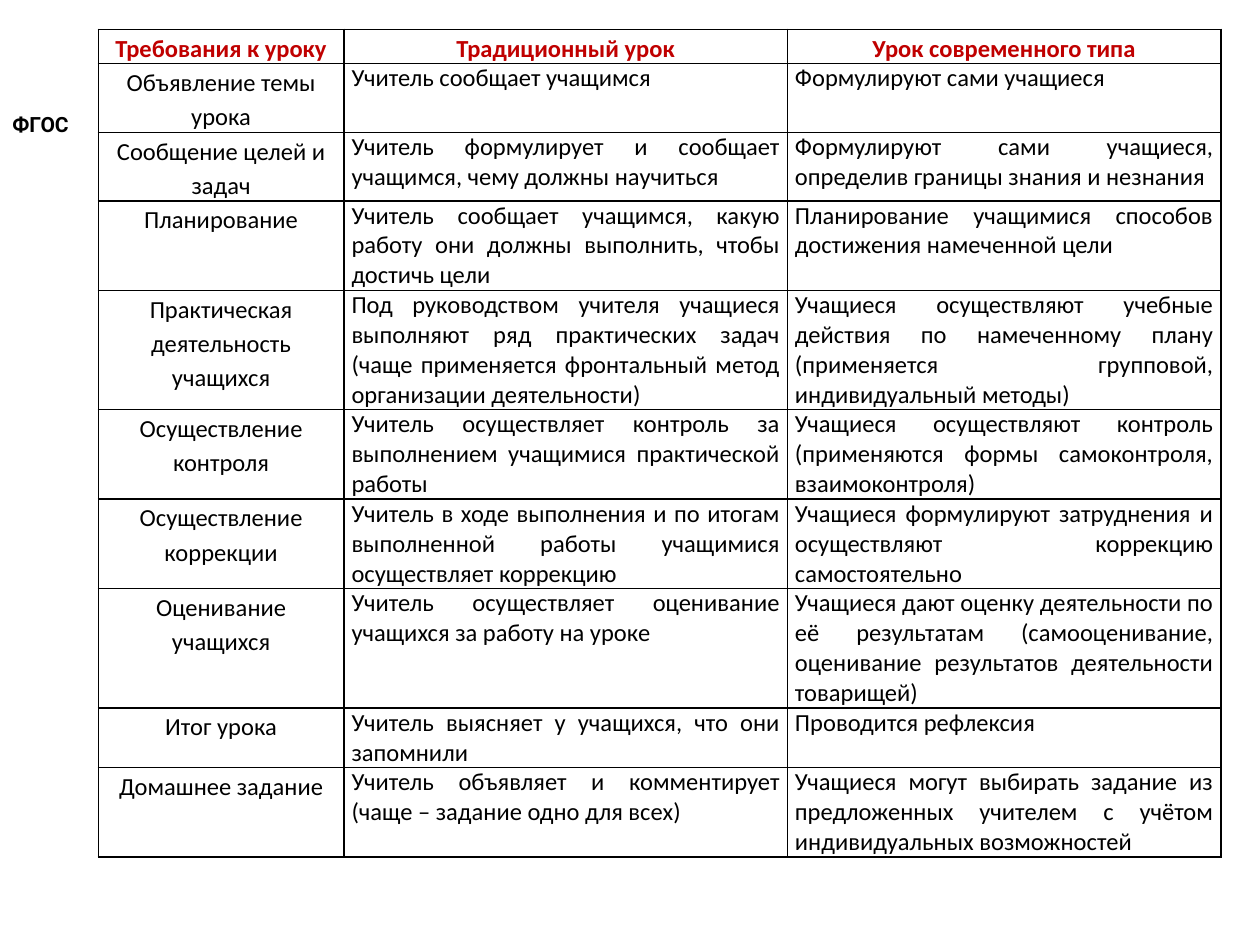
from dataclasses import dataclass

from lxml import etree
from pptx import Presentation
from pptx import util as u
from pptx.dml.color import RGBColor
from pptx.enum import text
from pptx.oxml.ns import qn


@dataclass(frozen=True)
class Theme:
    ink: str = "000000"
    head: str = "C00000"
    font: str = "Calibri"
    tag_font: str = "Roboto"
    size: int = 14
    tag: int = 12
    gap: int = 16
    after: int = 10
    lead: float = 1.15
    pad: float = 0.06
    rule: int = 1


T = Theme()
WIDE, HIGH = 10, 7.5
LEFT, TOP = 0.078, 0.031  # shares of the slide
COLS = (1.95, 3.52, 3.44)
LOOSE, TIGHT = 0.27, 0.235  # height of a text line, in inches

HEADS = ("Требования к уроку", "Традиционный урок", "Урок современного типа")

# Each row: lines of text, line height, then the three cells
ROWS = (
    (2, LOOSE, "Объявление темы урока", "Учитель сообщает учащимся",
     "Формулируют сами учащиеся "),
    (2, LOOSE, "Сообщение целей и задач",
     "Учитель формулирует и сообщает учащимся, чему должны научиться",
     "Формулируют сами учащиеся, определив границы знания и незнания"),
    (3, TIGHT, "Планирование",
     "Учитель сообщает учащимся, какую работу они должны выполнить, "
     "чтобы достичь цели",
     "Планирование учащимися способов достижения намеченной цели"),
    (4, TIGHT, "Практическая деятельность учащихся",
     "Под руководством учителя учащиеся выполняют ряд практических задач "
     "(чаще применяется фронтальный метод организации деятельности)",
     "Учащиеся осуществляют учебные действия по намеченному плану "
     "(применяется групповой, индивидуальный методы)"),
    (3, TIGHT, "Осуществление контроля",
     "Учитель осуществляет контроль за выполнением учащимися "
     "практической работы",
     "Учащиеся осуществляют контроль (применяются формы самоконтроля, "
     "взаимоконтроля)"),
    (3, TIGHT, "Осуществление коррекции",
     "Учитель в ходе выполнения и по итогам выполненной работы учащимися "
     "осуществляет коррекцию",
     "Учащиеся формулируют затруднения и осуществляют коррекцию "
     "самостоятельно"),
    (4, TIGHT, "Оценивание учащихся",
     "Учитель осуществляет оценивание учащихся за работу на уроке",
     "Учащиеся дают оценку деятельности по её результатам "
     "(самооценивание, оценивание результатов деятельности товарищей)"),
    (2, TIGHT, "Итог урока",
     "Учитель выясняет у учащихся, что они запомнили",
     "Проводится рефлексия"),
    (3, TIGHT, "Домашнее задание",
     "Учитель объявляет и комментирует (чаще – задание одно для всех)",
     "Учащиеся могут выбирать задание из предложенных учителем "
     "с учётом индивидуальных возможностей"),
)


def add_run(par, words, size, font=T.font, color=T.ink, bold=False):
    run = par.add_run()
    run.text = words
    run.font.size = u.Pt(size)
    run.font.name = font
    run.font.bold = bold
    run.font.color.rgb = RGBColor.from_string(color)


def add_rules(cell):
    """Draw a thin line on all four sides of a cell."""
    props = cell._tc.get_or_add_tcPr()
    for spot, side in enumerate(("a:lnL", "a:lnR", "a:lnT", "a:lnB")):
        line = etree.Element(qn(side), w=str(u.Pt(T.rule)))
        fill = etree.SubElement(line, qn("a:solidFill"))
        etree.SubElement(fill, qn("a:srgbClr"), val=T.ink)
        props.insert(spot, line)


def fill_cell(cell, words, head, label):
    cell.margin_left = cell.margin_right = u.Inches(T.pad)
    cell.margin_top = cell.margin_bottom = 0
    cell.fill.background()
    add_rules(cell)
    par = cell.text_frame.paragraphs[0]
    par.space_after = u.Pt(T.after)
    if head or label:
        par.alignment = text.PP_ALIGN.CENTER
        par.line_spacing = T.lead
    else:
        par.alignment = text.PP_ALIGN.JUSTIFY
    add_run(par, words, T.size, color=T.head if head else T.ink, bold=head)


def add_grid(slide):
    rows = ((1, LOOSE, *HEADS), *ROWS)
    tall = [lines * step for lines, step, *_ in rows]
    grid = slide.shapes.add_table(
        len(rows), len(COLS), u.Inches(LEFT * WIDE), u.Inches(TOP * HIGH),
        u.Inches(sum(COLS)), u.Inches(sum(tall))).table
    grid.first_row = grid.horz_banding = False
    for col, width in zip(grid.columns, COLS):
        col.width = u.Inches(width)
    for r, (_, _, *cells) in enumerate(rows):
        grid.rows[r].height = u.Inches(tall[r])
        for c, words in enumerate(cells):
            fill_cell(grid.cell(r, c), words, head=r == 0, label=c == 0)


def add_tag(slide):
    box = slide.shapes.add_textbox(
        0, u.Inches(0.104 * HIGH), u.Inches(0.07 * WIDE),
        u.Inches(0.049 * HIGH))
    frame = box.text_frame
    frame.word_wrap = True
    frame.auto_size = text.MSO_AUTO_SIZE.SHAPE_TO_FIT_TEXT
    par = frame.paragraphs[0]
    add_run(par, "ФГОС", T.tag, font=T.tag_font, bold=True)
    add_run(par, " ", T.gap, font=T.tag_font)


def main():
    deck = Presentation()
    deck.slide_width, deck.slide_height = u.Inches(WIDE), u.Inches(HIGH)
    slide = deck.slides.add_slide(deck.slide_layouts[6])
    # Comparison of the two lesson types
    add_grid(slide)
    # Side tag
    add_tag(slide)
    deck.save("out.pptx")


if __name__ == "__main__":
    main()
